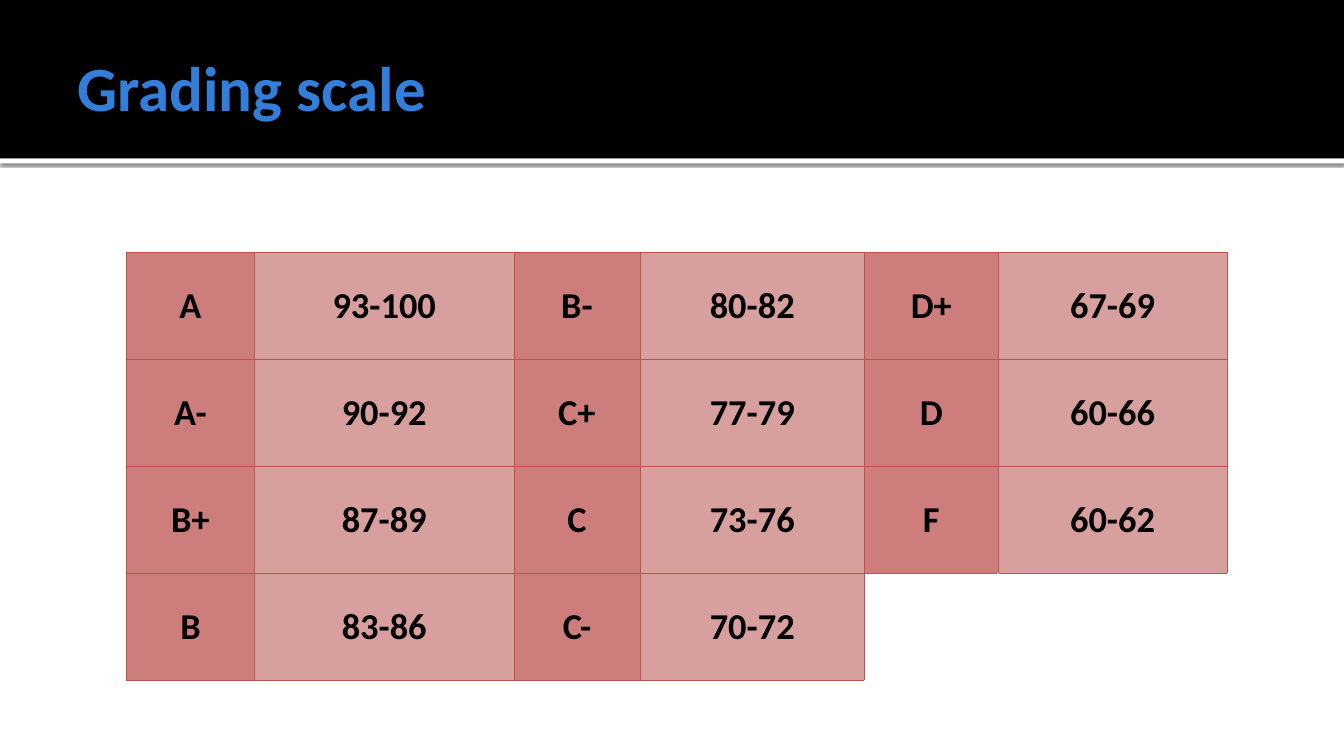
from dataclasses import dataclass

from lxml import etree
from pptx import Presentation
from pptx import util as u
from pptx.dml.color import RGBColor
from pptx.enum import shapes, text
from pptx.oxml.ns import qn

TITLE = "Grading scale"
GRADES = [
    ("A", "93-100", "B-", "80-82", "D+", "67-69"),
    ("A-", "90-92", "C+", "77-79", "D", "60-66"),
    ("B+", "87-89", "C", "73-76", "F", "60-62"),
    ("B", "83-86", "C-", "70-72", "", ""),
]
COLUMN_WIDTHS = (3.24, 6.53, 3.18, 5.66, 3.36, 5.78)
ROW_HEIGHT = 2.7
SLIDE_WIDTH, SLIDE_HEIGHT = 33.87, 19.05
BAND_HEIGHT, RULE_HEIGHT = 3.99, 0.13


@dataclass(frozen=True)
class Theme:
    font: str = "Calibri"
    title_size: float = 45
    grade_size: float = 26
    border_width: float = 0.5
    title: str = "337ED9"
    ink: str = "000000"
    paper: str = "FFFFFF"
    border: str = "C0504D"
    letter_fill: str = "CD7E7C"
    range_fill: str = "D79F9D"


THEME = Theme()


def write(frame, words, *, size, color, align, insets):
    """Fill a text frame or table cell; insets are left, top, right, bottom in cm."""
    frame.margin_left, frame.margin_top, frame.margin_right, frame.margin_bottom = map(u.Cm, insets)
    frame.vertical_anchor = text.MSO_ANCHOR.MIDDLE
    paragraph = getattr(frame, "text_frame", frame).paragraphs[0]
    paragraph.alignment = align
    run = paragraph.add_run()
    run.text = words
    run.font.name, run.font.size, run.font.bold = THEME.font, u.Pt(size), True
    run.font.color.rgb = RGBColor.from_string(color)


def add_band(slide, top, height, color):
    band = slide.shapes.add_shape(shapes.MSO_SHAPE.RECTANGLE, 0, u.Cm(top),
                                  u.Cm(SLIDE_WIDTH), u.Cm(height))
    band.shadow.inherit = False
    band.fill.solid()
    band.fill.fore_color.rgb = RGBColor.from_string(color)
    band.line.fill.background()
    return band


def add_drop_shadow(band):
    effects = band._element.spPr.find(qn("a:effectLst"))
    shadow = etree.SubElement(effects, qn("a:outerShdw"), blurRad=str(u.Pt(2.5)),
                              dist=str(u.Pt(0.8)), dir="5400000", rotWithShape="0")
    shade = etree.SubElement(shadow, qn("a:srgbClr"), val=THEME.ink)
    etree.SubElement(shade, qn("a:alpha"), val="60000")


def draw_borders(cell, sides):
    """Line the named sides, given in the order L, R, T, B; call before filling."""
    properties = cell._tc.get_or_add_tcPr()
    for side in sides:
        line = etree.SubElement(properties, qn(f"a:ln{side}"), w=str(u.Pt(THEME.border_width)))
        fill = etree.SubElement(line, qn("a:solidFill"))
        etree.SubElement(fill, qn("a:srgbClr"), val=THEME.border)


def add_title(slide):
    title = slide.shapes.title
    title.left, title.top, title.width, title.height = map(u.Cm, (1.7, 0.43, 30.48, 3.48))
    write(title.text_frame, TITLE, size=THEME.title_size, color=THEME.title,
          align=text.PP_ALIGN.LEFT, insets=(0.25, 0.13, 0.13, 0.13))
    slide.shapes._spTree.append(title._element)


def add_grades(slide):
    table = slide.shapes.add_table(
        len(GRADES), len(COLUMN_WIDTHS), u.Cm(3.18), u.Cm(6.35),
        u.Cm(sum(COLUMN_WIDTHS)), u.Cm(ROW_HEIGHT * len(GRADES))).table
    table.first_row = table.horz_banding = False
    for column, width in zip(table.columns, COLUMN_WIDTHS):
        column.width = u.Cm(width)
    for r, grades in enumerate(GRADES):
        table.rows[r].height = u.Cm(ROW_HEIGHT)
        for c, words in enumerate(grades):
            cell = table.cell(r, c)
            if words:
                draw_borders(cell, "LRTB")
                color = THEME.range_fill if c % 2 else THEME.letter_fill
                write(cell, words, size=THEME.grade_size, color=THEME.ink,
                      align=text.PP_ALIGN.CENTER, insets=(0.15, 0, 0.15, 0))
            else:
                draw_borders(cell, "LT" if grades[c - 1] else "T")
                color = THEME.paper
            cell.fill.solid()
            cell.fill.fore_color.rgb = RGBColor.from_string(color)


def main():
    deck = Presentation()
    deck.slide_width, deck.slide_height = u.Cm(SLIDE_WIDTH), u.Cm(SLIDE_HEIGHT)
    slide = deck.slides.add_slide(deck.slide_layouts[5])
    add_drop_shadow(add_band(slide, BAND_HEIGHT, RULE_HEIGHT, THEME.paper))
    add_band(slide, 0, BAND_HEIGHT, THEME.ink)
    add_title(slide)
    add_grades(slide)
    deck.save("out.pptx")


if __name__ == "__main__":
    main()
